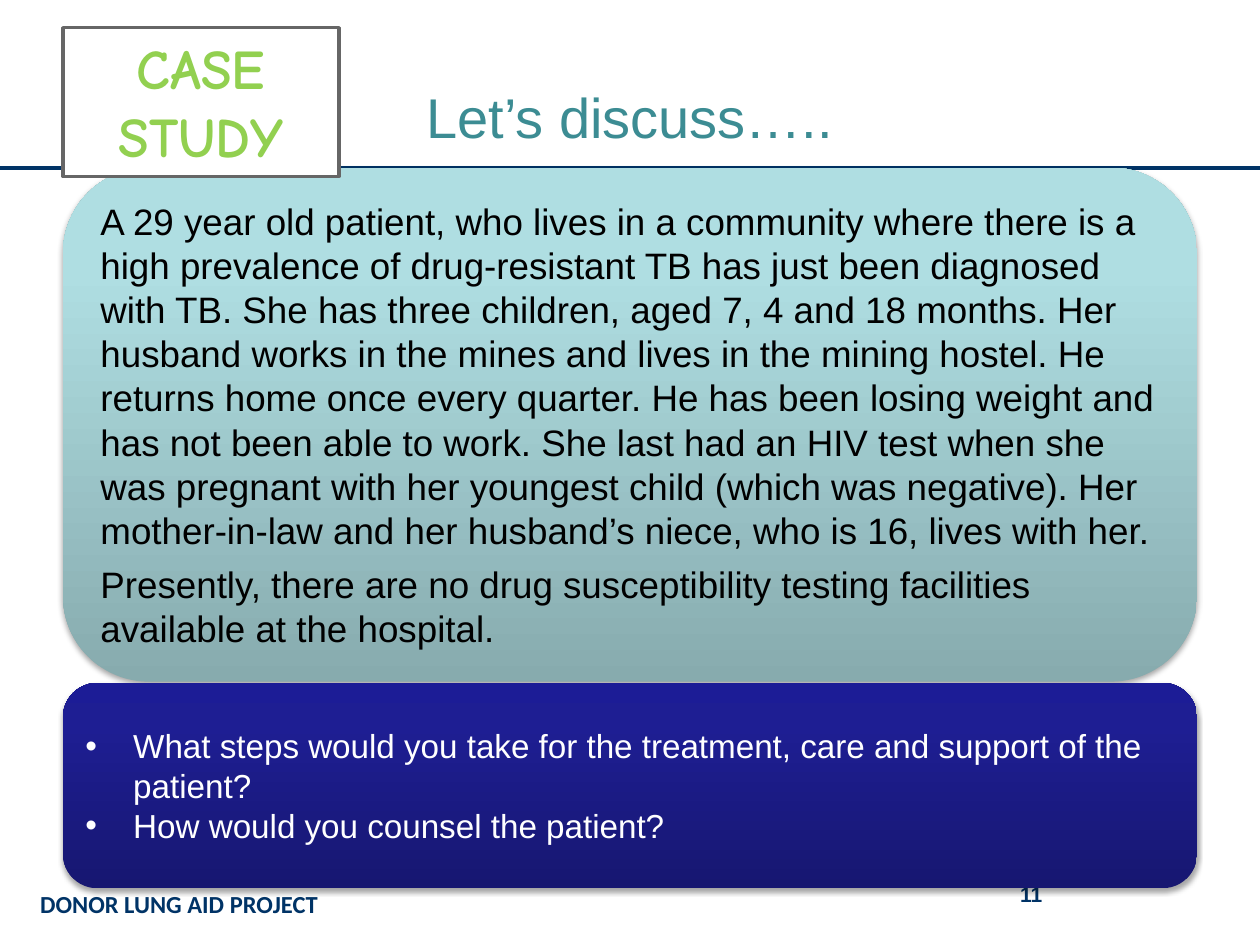
from lxml.etree import SubElement
from pptx import Presentation
from pptx.dml.color import RGBColor
from pptx.enum.shapes import MSO_CONNECTOR, MSO_SHAPE
from pptx.enum.text import MSO_ANCHOR, PP_ALIGN
from pptx.oxml import parse_xml
from pptx.oxml.ns import nsdecls, qn
from pptx.util import Inches, Pt

NAVY = "003366"
MARGIN, PANEL_WIDTH = 0.5, 9


def color(value):
    return RGBColor.from_string(value)


def write(paragraph, text, size, value, font="Arial", bold=False, align=PP_ALIGN.LEFT):
    paragraph.alignment = align
    run = paragraph.add_run()
    run.text = text
    run.font.size = Pt(size)
    run.font.name = font
    run.font.bold = bold
    run.font.color.rgb = color(value)


prs = Presentation()
prs.slide_width, prs.slide_height = Inches(10), Inches(7.5)
slide = prs.slides.add_slide(prs.slide_layouts[5])
shapes = slide.shapes

# Title
title = shapes.title
title.left, title.top = Inches(MARGIN), Inches(0.16)
title.width, title.height = Inches(PANEL_WIDTH), Inches(1.08)
title.text_frame.vertical_anchor = MSO_ANCHOR.BOTTOM
write(title.text_frame.paragraphs[0], "Let’s discuss…..", 32, "3C8C93", align=PP_ALIGN.CENTER)

# Rule across the slide under the title
rule = shapes.add_connector(MSO_CONNECTOR.STRAIGHT, 0, Inches(1.33), Inches(10), Inches(1.33))
rule.line.color.rgb = color(NAVY)
rule.line.width = Pt(2.25)
SubElement(rule._element.spPr, qn("a:effectLst"))

# Footer and page number
footers = [
    ("DONOR LUNG AID PROJECT", 0.22, 7.01, 3.33, 0.33, 14, "Calibri", PP_ALIGN.LEFT),
    ("11", 7.06, 6.95, 2.25, 0.4, 12, "Arial", PP_ALIGN.CENTER),
]
for text, left, top, width, height, size, font, align in footers:
    footer = shapes.add_textbox(Inches(left), Inches(top), Inches(width), Inches(height))
    footer.text_frame.word_wrap = True
    write(footer.text_frame.paragraphs[0], text, size, NAVY, font, True, align)

# Case description and questions, in shaded panels
case = [
    "A 29 year old patient, who lives in a community where there is a high prevalence of "
    "drug-resistant TB has just been diagnosed with TB. She has three children, aged 7, 4 and "
    "18 months. Her husband works in the mines and lives in the mining hostel. He returns home "
    "once every quarter. He has been losing weight and has not been able to work. She last had "
    "an HIV test when she was pregnant with her youngest child (which was negative). Her "
    "mother-in-law and her husband’s niece, who is 16, lives with her.",
    "Presently, there are no drug susceptibility testing facilities available at the hospital.",
]
questions = [
    "What steps would you take for the treatment, care and support of the patient?",
    "How would you counsel the patient?",
]
panels = [
    (case, 1.33, 4.08, ("87ABAE", "AFDEE2", "AFE0E4"), 21, "000000", 6, False),
    (questions, 5.42, 1.63, ("171771", "1E1E93", "1C1C96"), 19, "FFFFFF", 0, True),
]
for texts, top, height, shades, size, text_color, space_after, bulleted in panels:
    panel = shapes.add_shape(MSO_SHAPE.ROUNDED_RECTANGLE, Inches(MARGIN), Inches(top),
                             Inches(PANEL_WIDTH), Inches(height))
    # Gradient from bottom to top
    panel.fill.gradient()
    panel.fill.gradient_angle = 90
    stops = panel._element.spPr.find(qn("a:gradFill")).find(qn("a:gsLst"))
    for stop in list(stops):
        stops.remove(stop)
    for position, shade in zip((0, 80, 100), shades):
        stop = SubElement(stops, qn("a:gs"), pos=str(position * 1000))
        SubElement(stop, qn("a:srgbClr"), val=shade)
    panel.line.fill.background()
    # Soft shadow below
    panel.shadow.inherit = False
    panel._element.spPr.find(qn("a:effectLst")).append(parse_xml(
        f'<a:outerShdw {nsdecls("a")} blurRad="{Pt(3.1)}" dist="{Pt(1.8)}" dir="5400000" '
        'rotWithShape="0"><a:srgbClr val="000000"><a:alpha val="35000"/></a:srgbClr>'
        '</a:outerShdw>'))
    frame = panel.text_frame
    frame.word_wrap = True
    frame.vertical_anchor = MSO_ANCHOR.MIDDLE
    for index, text in enumerate(texts):
        paragraph = frame.add_paragraph() if index else frame.paragraphs[0]
        paragraph.space_after = Pt(space_after)
        write(paragraph, text, size, text_color)
        if bulleted:
            properties = paragraph._p.get_or_add_pPr()
            properties.set("marL", str(Inches(0.38)))
            properties.set("indent", str(Inches(-0.38)))
            SubElement(properties, qn("a:buFont"), typeface="Arial")
            SubElement(properties, qn("a:buChar"), char="•")

# Case study tag
tag = shapes.add_shape(MSO_SHAPE.RECTANGLE, Inches(MARGIN), Inches(0.22), Inches(2.19), Inches(1.18))
tag.shadow.inherit = False
tag.fill.solid()
tag.fill.fore_color.rgb = color("FFFFFF")
tag.line.color.rgb = color("666666")
tag.line.width = Pt(2)
tag.text_frame.word_wrap = True
tag.text_frame.vertical_anchor = MSO_ANCHOR.TOP
write(tag.text_frame.paragraphs[0], "CASE STUDY", 32, "92D050", "Comic Neue", True, PP_ALIGN.CENTER)

prs.save("out.pptx")
